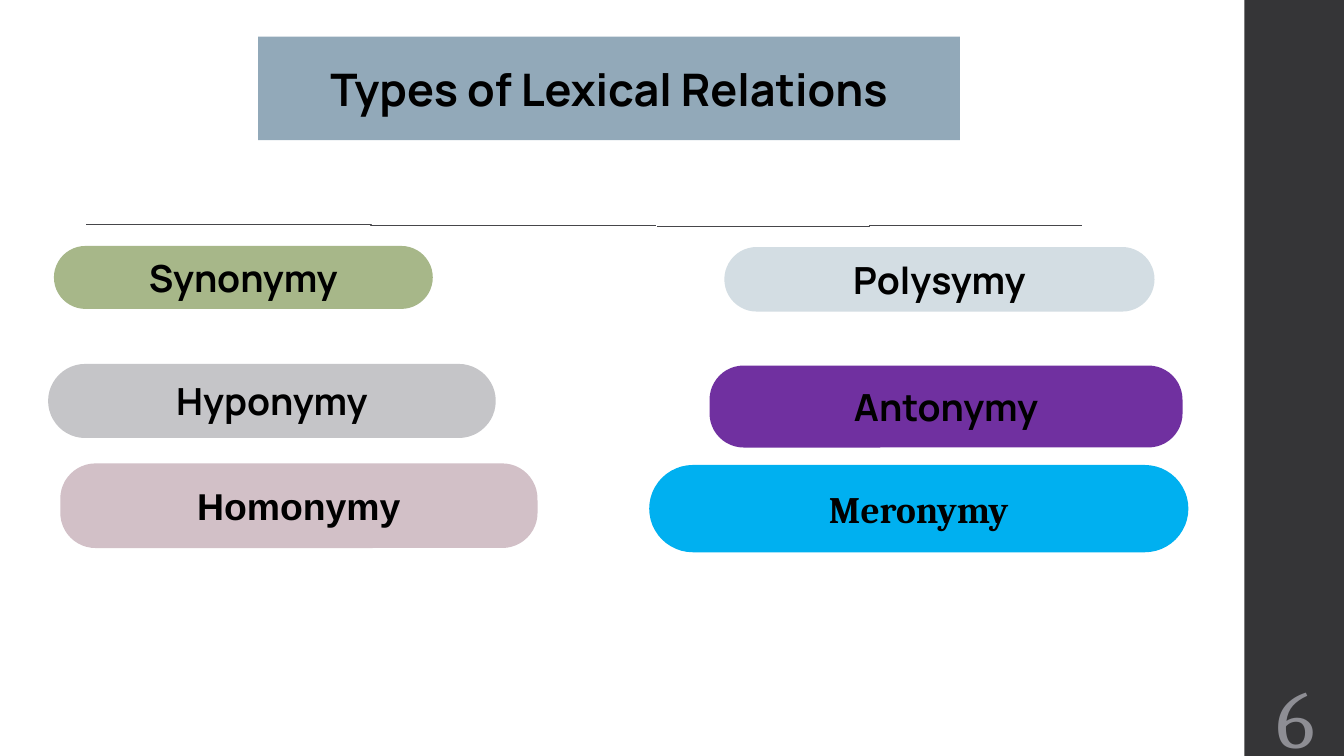
"""Build the slide on the types of lexical relations."""
from lxml.etree import SubElement
from pptx import Presentation
from pptx.dml.color import RGBColor
from pptx.enum.shapes import MSO_CONNECTOR as CONN, MSO_SHAPE as SHAPE
from pptx.enum.text import MSO_ANCHOR as ANCHOR, MSO_AUTO_SIZE as AUTO, PP_ALIGN as ALIGN
from pptx.oxml.ns import qn
from pptx.util import Cm, Pt

THEME = {
    "band": "353537", "number": "8E8E94", "rule": "46464A", "text": "000000",
    "title": "92A9B9", "green": "A7B789", "grey": "C5C5C8", "rose": "D2C0C7",
    "mist": "D3DDE3", "purple": "7030A0", "blue": "00B0F0",
    "title_size": 24, "pill_size": 20, "number_size": 44, "rule_width": 0.75,
    "main": "Manrope", "sans": "Arial", "serif": "Cambria",
}
SLIDE_W, SLIDE_H = 25.4, 14.29
BAND_LEFT = 23.52
INSET = 0.25

TITLE = ("Types of Lexical Relations", (4.88, 0.69, 13.26, 1.96))
RELATIONS = [
    ("Synonymy", (1.02, 4.65, 7.16, 1.19), "green", "main", 0.5),
    ("Hyponymy", (0.91, 6.88, 8.46, 1.4), "grey", "main", 0.5),
    ("Homonymy", (1.14, 8.76, 9.02, 1.6), "rose", "sans", 0.417),
    ("Polysymy", (13.69, 4.67, 8.13, 1.22), "mist", "main", 0.5),
    ("Antonymy", (13.41, 6.91, 8.94, 1.55), "purple", "main", 0.417),
    ("Meronymy", (12.27, 8.79, 10.19, 1.65), "blue", "serif", 0.5),
]
RULES = [(1.63, 4.24, 12.4, 4.26), (12.42, 4.28, 20.45, 4.27)]
NUMBER = ("6", (23.34, 12.98, 1.52, 1.09))


def color(name):
    return RGBColor.from_string(THEME[name])


def cms(values):
    return [Cm(v) for v in values]


def paint(sp, fill):
    sp.fill.solid()
    sp.fill.fore_color.rgb = color(fill)
    sp.line.fill.background()


def write(sp, text, font, size, ink="text", bold=True, align=ALIGN.CENTER, inset=INSET):
    tf = sp.text_frame
    tf.text = text
    tf.word_wrap = True
    tf.auto_size = AUTO.NONE
    tf.vertical_anchor = ANCHOR.MIDDLE
    tf.margin_left = tf.margin_right = tf.margin_top = tf.margin_bottom = Cm(inset)
    p = tf.paragraphs[0]
    p.alignment = align
    f = p.runs[0].font
    f.name, f.size, f.bold = THEME[font], Pt(THEME[size]), bold
    f.color.rgb = color(ink)


def add_box(slide, shape, box, fill):
    sp = slide.shapes.add_shape(shape, *cms(box))
    sp.shadow.inherit = False
    paint(sp, fill)
    return sp


def add_title(slide):
    text, box = TITLE
    sp = slide.shapes.title
    sp.left, sp.top, sp.width, sp.height = cms(box)
    geom = SubElement(sp.element.spPr, qn("a:prstGeom"), prst="roundRect")
    guides = SubElement(geom, qn("a:avLst"))
    SubElement(guides, qn("a:gd"), name="adj", fmla="val 50000")
    paint(sp, "title")
    write(sp, text, "main", "title_size")


def add_rule(slide, ends):
    line = slide.shapes.add_connector(CONN.ELBOW, *cms(ends))
    line.line.color.rgb = color("rule")
    line.line.width = Pt(THEME["rule_width"])
    SubElement(line.element.spPr, qn("a:effectLst"))


def main():
    prs = Presentation()
    prs.slide_width, prs.slide_height = Cm(SLIDE_W), Cm(SLIDE_H)
    slide = prs.slides.add_slide(prs.slide_layouts[5])

    add_box(slide, SHAPE.RECTANGLE, (BAND_LEFT, 0, SLIDE_W - BAND_LEFT, SLIDE_H), "band")
    text, box = NUMBER
    write(slide.shapes.add_textbox(*cms(box)), text, "serif", "number_size",
          "number", False, ALIGN.RIGHT, 0)

    add_title(slide)
    for ends in RULES:
        add_rule(slide, ends)
    for text, box, fill, font, rounding in RELATIONS:
        sp = add_box(slide, SHAPE.ROUNDED_RECTANGLE, box, fill)
        sp.adjustments[0] = rounding
        write(sp, text, font, "pill_size")

    prs.save("out.pptx")


if __name__ == "__main__":
    main()
